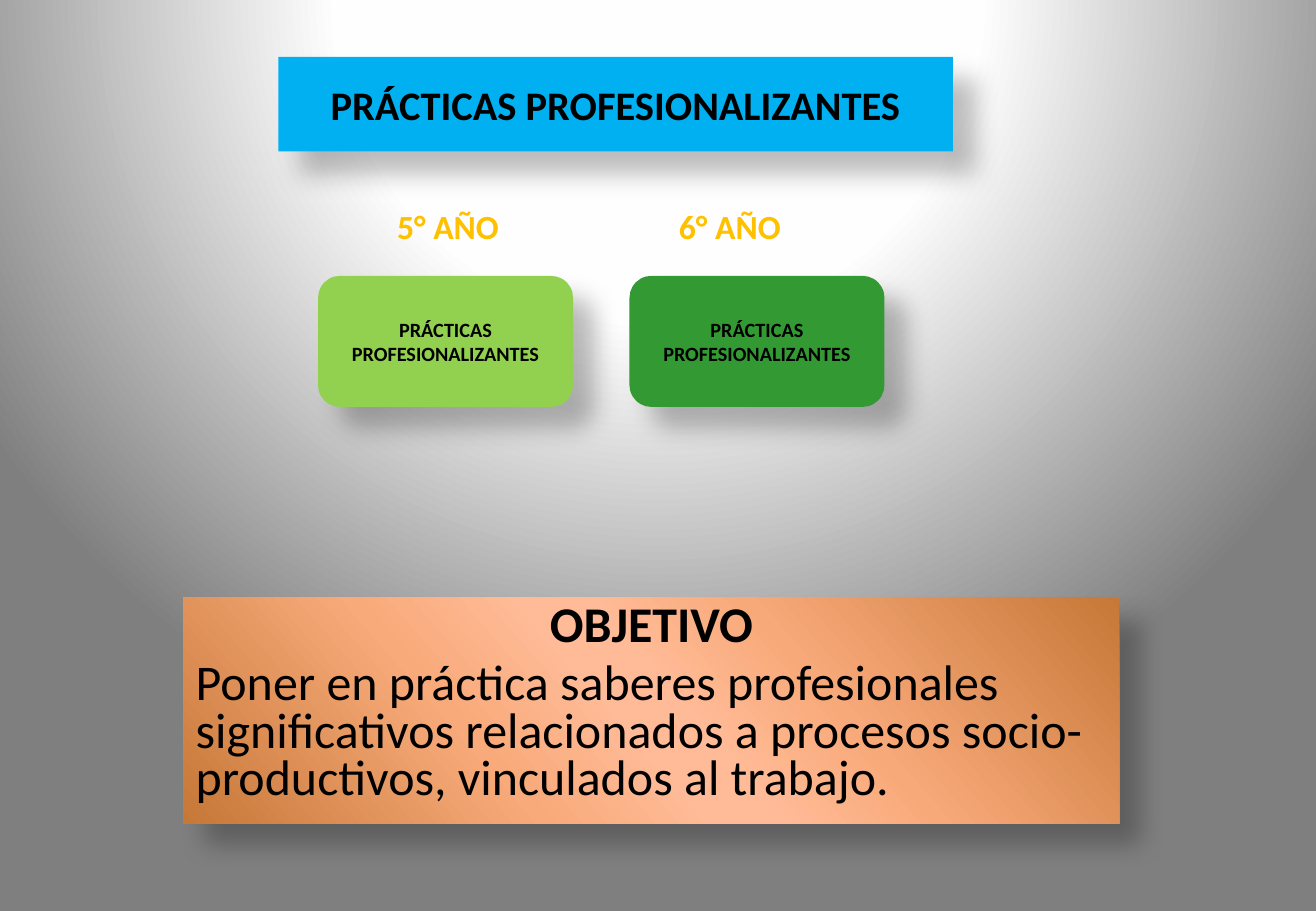
"""Build the slide on professional practices in the fifth and sixth years."""
from pptx import Presentation, util as u
from pptx.dml.color import RGBColor
from pptx.enum import shapes, text
from pptx.oxml import parse_xml
from pptx.oxml.ns import nsdecls

TITLE = "PRÁCTICAS PROFESIONALIZANTES"
YEARS = [("5° AÑO", "light"), ("6° AÑO", "dark")]
GOAL = ("OBJETIVO",
        "Poner en práctica saberes profesionales significativos relacionados a "
        "procesos socio-productivos, vinculados al trabajo.")

THEME = {
    "font": "Calibri", "ink": "000000", "label": "FFC000",
    "title": "00B0F0", "light": "92D050", "dark": "339933",
    "sizes": {"title": 24, "label": 20, "card": 12, "goal": 29.6},
    "goal": [(0, "C67838"), (33, "F8A979"), (47, "FFBB97"),
             (53, "FFBB97"), (68, "F8AA7A"), (100, "C67838")],
    "back": [(0, "FFFFFF"), (40, "FEFEFE"), (100, "7F7F7F")],
    "shadow": {"color": "000000", "alpha": 26, "blur": 15, "dist": 18, "angle": 45},
}
SLIDE = (27.51, 19.05)
TITLE_BOX = (5.82, 1.19, 14.1, 1.98)
GOAL_BOX = (3.84, 12.5, 19.56, 4.72)
CARD_BOX, CARD_STEP = (6.65, 5.77, 5.33, 2.74), 6.51
LABEL_BOX, LABEL_STEP = (8.05, 4.17, 3.73, 1.12), 5.89
RADIAL = ('<a:path path="circle"><a:fillToRect l="50000" t="-80000" '
          'r="50000" b="180000"/></a:path>')
LINEAR = f'<a:lin ang="{139 * 60000}" scaled="0"/>'


def put(obj, **values):
    for name, value in values.items():
        setattr(obj, name, value)


def cm(box, shift=0):
    x, y, w, h = box
    return [u.Cm(v) for v in (x + shift, y, w, h)]


def set_gradient(fill, holder, stops, direction):
    fill.solid()
    gs = "".join(f'<a:gs pos="{pos * 1000}"><a:srgbClr val="{color}"/></a:gs>'
                 for pos, color in stops)
    old = holder.find(".//{*}solidFill")
    old.getparent().replace(old, parse_xml(
        f'<a:gradFill {nsdecls("a")} rotWithShape="1"><a:gsLst>{gs}</a:gsLst>'
        f'{direction}</a:gradFill>'))


def add_shadow(sp):
    sh = THEME["shadow"]
    sp._element.spPr.append(parse_xml(
        f'<a:effectLst {nsdecls("a")}><a:outerShdw blurRad="{u.Pt(sh["blur"])}" '
        f'dist="{u.Pt(sh["dist"])}" dir="{sh["angle"] * 60000}" algn="tl" '
        f'rotWithShape="0"><a:srgbClr val="{sh["color"]}">'
        f'<a:alpha val="{sh["alpha"] * 1000}"/></a:srgbClr></a:outerShdw>'
        f'</a:effectLst>'))


def write(p, words, role, color="ink", bold=True, **layout):
    put(p, **layout)
    r = p.add_run()
    r.text = words
    put(r.font, name=THEME["font"], size=u.Pt(THEME["sizes"][role]), bold=bold)
    r.font.color.rgb = RGBColor.from_string(THEME[color])


def add_panel(s, kind, box, fill):
    sp = s.shapes.add_shape(kind, *box)
    sp.line.fill.background()
    if isinstance(fill, list):
        set_gradient(sp.fill, sp._element.spPr, fill, LINEAR)
    else:
        sp.fill.solid()
        sp.fill.fore_color.rgb = RGBColor.from_string(fill)
    add_shadow(sp)
    put(sp.text_frame, word_wrap=True, vertical_anchor=text.MSO_ANCHOR.MIDDLE)
    return sp.text_frame


def main():
    prs = Presentation()
    put(prs, slide_width=u.Cm(SLIDE[0]), slide_height=u.Cm(SLIDE[1]))
    s = prs.slides.add_slide(prs.slide_layouts[6])
    set_gradient(s.background.fill, s._element.cSld, THEME["back"], RADIAL)
    kinds, align = shapes.MSO_SHAPE, text.PP_ALIGN

    tf = add_panel(s, kinds.RECTANGLE, cm(TITLE_BOX), THEME["title"])
    write(tf.paragraphs[0], TITLE, "title", alignment=align.CENTER)

    for i, (year, shade) in enumerate(YEARS):
        tf = add_panel(s, kinds.ROUNDED_RECTANGLE, cm(CARD_BOX, i * CARD_STEP),
                       THEME[shade])
        write(tf.paragraphs[0], TITLE, "card", alignment=align.CENTER)
        tf = s.shapes.add_textbox(*cm(LABEL_BOX, i * LABEL_STEP)).text_frame
        tf.word_wrap = True
        write(tf.paragraphs[0], year, "label", "label")

    tf = add_panel(s, kinds.RECTANGLE, cm(GOAL_BOX), THEME["goal"])
    tf.vertical_anchor = text.MSO_ANCHOR.TOP
    spacing = {"line_spacing": 0.8, "space_before": u.Pt(6)}
    heading, body = GOAL
    write(tf.paragraphs[0], heading, "goal", alignment=align.CENTER, **spacing)
    write(tf.add_paragraph(), body, "goal", bold=False, alignment=align.LEFT, **spacing)

    prs.save("out.pptx")


if __name__ == "__main__":
    main()
